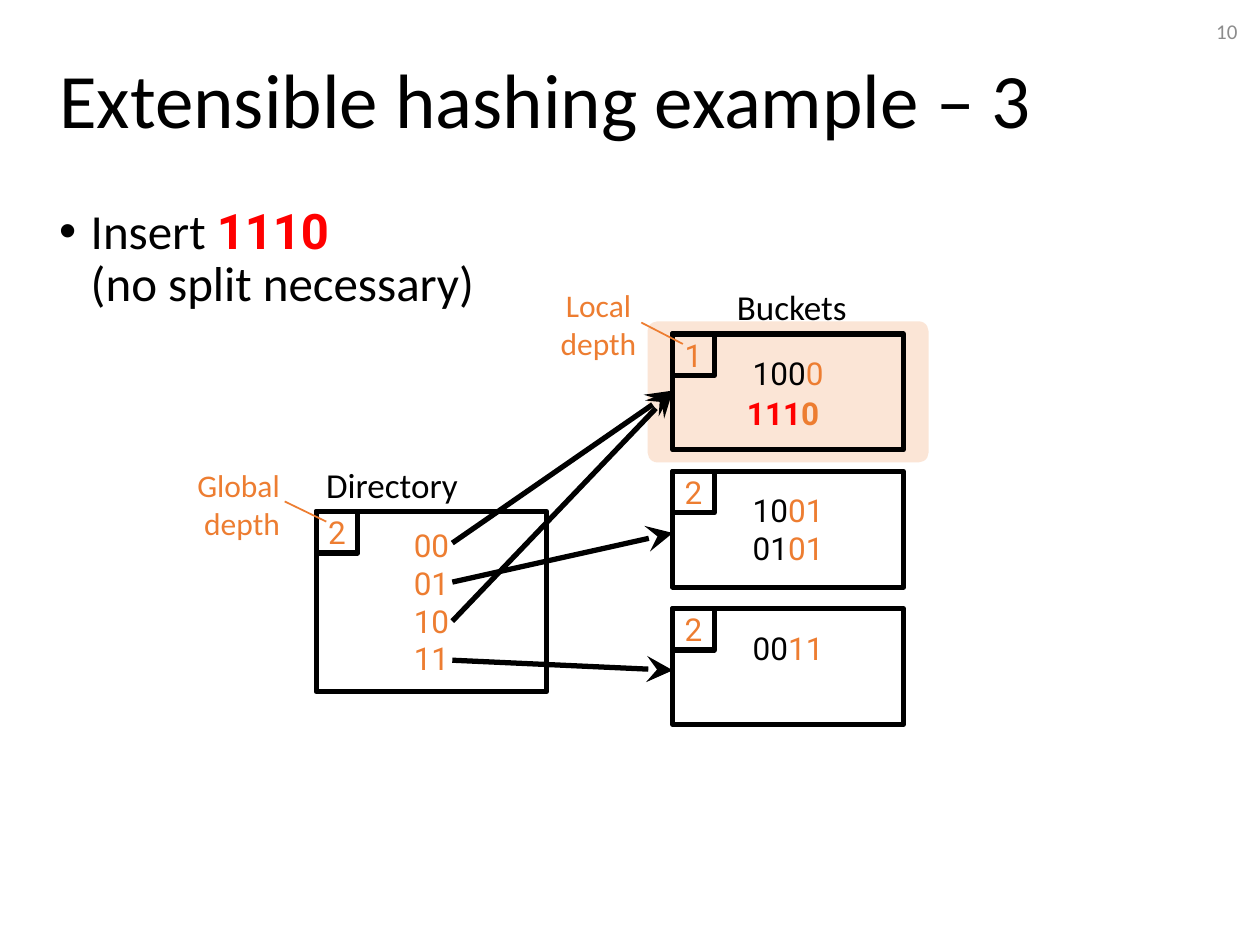
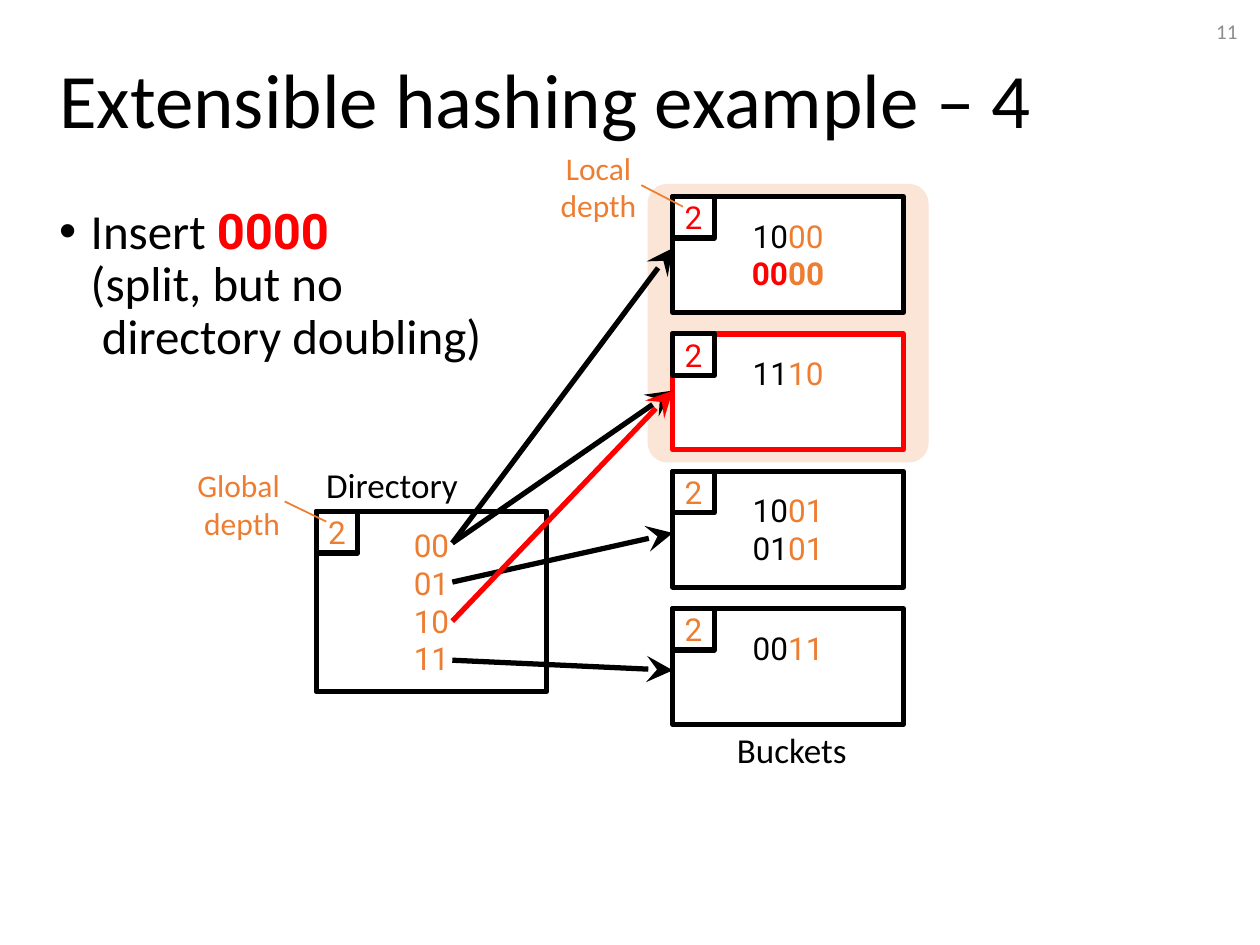
from dataclasses import dataclass

from lxml import etree
from pptx import Presentation
from pptx.dml.color import RGBColor
from pptx.enum import shapes, text
from pptx.oxml import ns
from pptx.util import Inches, Pt


@dataclass(frozen=True)
class Theme:
    ink: str = "000000"
    accent: str = "ED7D31"
    new: str = "FF0000"
    highlight: str = "FBE5D6"
    paper: str = "FFFFFF"
    muted: str = "8C8C8C"
    sans: str = "Calibri"
    digits: str = "Roboto"
    title_size: int = 44
    body_size: int = 28
    label_size: int = 20
    key_size: int = 18
    number_size: int = 12
    box_line: float = 3
    callout_line: float = 1


THEME = Theme()
LEFT, CENTER, RIGHT = text.PP_ALIGN.LEFT, text.PP_ALIGN.CENTER, text.PP_ALIGN.RIGHT
TOP, MIDDLE = text.MSO_ANCHOR.TOP, text.MSO_ANCHOR.MIDDLE

BUCKET_LEFT, BUCKET_WIDTH, BUCKET_HEIGHT = 5.34, 1.83, 0.92
FIRST_BUCKET_TOP, BUCKET_PITCH = 1.56, 1.09
ARROW_ENDS = (1.97, 3.1, 4.23, 5.32)  # one per bucket slot
DEPTH_SIDE = 0.33
DIRECTORY_BOX = (2.51, 4.06, 1.83, 1.43)


def bucket_top(slot):
    return FIRST_BUCKET_TOP + slot * BUCKET_PITCH


def place(shape, box):
    shape.left, shape.top, shape.width, shape.height = map(Inches, box)


def write(frame, paragraphs, size, font, align=LEFT, anchor=TOP, wrap=False):
    """Fill a frame; each paragraph is a list of (text, colour, bold, font) runs."""
    frame.word_wrap = wrap
    frame.auto_size = text.MSO_AUTO_SIZE.NONE
    frame.vertical_anchor = anchor
    for index, runs in enumerate(paragraphs):
        paragraph = frame.add_paragraph() if index else frame.paragraphs[0]
        paragraph.alignment = align
        paragraph.font.size = Pt(size)
        paragraph.font.name = font
        for content, colour, bold, run_font in runs:
            for line_index, line in enumerate(content.split("\n")):
                if line_index:
                    paragraph.add_line_break()
                if line:
                    run = paragraph.add_run()
                    run.text = line
                    run.font.color.rgb = RGBColor.from_string(colour)
                    run.font.bold = bold
                    if run_font != font:
                        run.font.name = run_font


def plain(content, colour, font=THEME.digits):
    return [(content, colour, False, font)]


def hashed_key(key, depth, is_new=False):
    """Runs for a key whose last bits, as many as the local depth, are accented."""
    return [(key[:-depth], THEME.new if is_new else THEME.ink, is_new, THEME.digits),
            (key[-depth:], THEME.accent, is_new, THEME.digits)]


def add_label(slide, box, content, size, colour, align=LEFT, anchor=TOP):
    label = slide.shapes.add_textbox(*map(Inches, box))
    write(label.text_frame, [plain(content, colour, THEME.sans)], size,
          THEME.sans, align, anchor)


def add_box(slide, box, fill=None, line=None, kind=shapes.MSO_SHAPE.RECTANGLE):
    shape = slide.shapes.add_shape(kind, *map(Inches, box))
    shape.shadow.inherit = False
    if fill:
        shape.fill.solid()
        shape.fill.fore_color.rgb = RGBColor.from_string(fill)
    else:
        shape.fill.background()
    if line:
        shape.line.color.rgb = RGBColor.from_string(line)
        shape.line.width = Pt(THEME.box_line)
    else:
        shape.line.fill.background()
    return shape


def add_line(slide, start, end, colour, width, arrow=False):
    line = slide.shapes.add_connector(
        shapes.MSO_CONNECTOR.STRAIGHT, *map(Inches, (*start, *end)))
    line.line.color.rgb = RGBColor.from_string(colour)
    line.line.width = Pt(width)
    if arrow:
        etree.SubElement(line.line._get_or_add_ln(), ns.qn("a:tailEnd"),
                         type="stealth", w="lg", len="lg")
    etree.SubElement(line._element.spPr, ns.qn("a:effectLst"))


def add_depth(slide, left, top, depth, colour=THEME.accent, fill=None):
    corner = add_box(slide, (left, top, DEPTH_SIDE, DEPTH_SIDE), fill, THEME.ink)
    write(corner.text_frame, [plain(str(depth), colour)], THEME.key_size,
          THEME.digits, CENTER, MIDDLE)


def add_bucket(slide, slot, depth, keys, line=THEME.ink, fill=None,
               depth_colour=THEME.accent):
    top = bucket_top(slot)
    bucket = add_box(slide, (BUCKET_LEFT, top, BUCKET_WIDTH, BUCKET_HEIGHT), fill, line)
    bucket.text_frame.margin_top = Inches(0.16)
    write(bucket.text_frame, keys, THEME.key_size, THEME.digits, CENTER)
    add_depth(slide, BUCKET_LEFT, top, depth, depth_colour, fill)


def add_highlight(slide, first_slot, count):
    height = (count - 1) * BUCKET_PITCH + BUCKET_HEIGHT + 0.2
    highlight = add_box(
        slide, (BUCKET_LEFT - 0.2, bucket_top(first_slot) - 0.1, BUCKET_WIDTH + 0.4, height),
        THEME.highlight, kind=shapes.MSO_SHAPE.ROUNDED_RECTANGLE)
    highlight.adjustments[0] = 0.07


def add_directory(slide, box):
    left, top, _, _ = box
    directory = add_box(slide, box, line=THEME.ink)
    entries = [plain(f"{entry:02b}", THEME.accent) for entry in range(4)]
    write(directory.text_frame, entries, THEME.key_size, THEME.digits, CENTER, MIDDLE)
    add_depth(slide, left, top, 2)
    add_label(slide, (left - 0.02, top - 0.43, 1.3, 0.44), "Directory",
              THEME.label_size, THEME.ink)
    add_label(slide, (left - 1.07, top - 0.41, 0.88, 0.71), "Global\ndepth",
              THEME.key_size, THEME.accent, RIGHT)
    add_line(slide, (left - 0.25, top - 0.08), (left + 0.08, top + 0.08),
             THEME.accent, THEME.callout_line)


def add_local_depth(slide, slot):
    """Label the depth corner of the topmost bucket, clear of the pointers."""
    top = bucket_top(slot)
    add_label(slide, (BUCKET_LEFT - 1.01, top - 0.43, 0.84, 0.71), "Local\ndepth",
              THEME.key_size, THEME.accent, CENTER)
    add_line(slide, (BUCKET_LEFT - 0.25, top - 0.09), (BUCKET_LEFT + 0.08, top + 0.08),
             THEME.accent, THEME.callout_line)


def add_pointer(slide, entry, slot, colour=THEME.ink):
    left, top, *_ = DIRECTORY_BOX
    add_line(slide, (left + 1.08, top + 0.25 + 0.31 * entry),
             (BUCKET_LEFT, ARROW_ENDS[slot]), colour, THEME.box_line, arrow=True)


def add_frame(presentation, number, title, key, remark):
    """Start a slide with its title, bullet and slide number."""
    slide = presentation.slides.add_slide(presentation.slide_layouts[1])
    heading, body = slide.shapes.title, slide.placeholders[1]
    place(heading, (0.37, 0.18, 9.63, 1.29))
    write(heading.text_frame, [plain(title, THEME.ink, THEME.sans)],
          THEME.title_size, THEME.sans, anchor=MIDDLE, wrap=True)
    heading.text_frame.paragraphs[0].line_spacing = 0.9

    place(body, (0.37, 1.59, 3.97, 1.75))
    write(body.text_frame, [[("Insert ", THEME.ink, False, THEME.sans),
                             (key, THEME.new, True, THEME.digits),
                             ("\n" + remark, THEME.ink, False, THEME.sans)]],
          THEME.body_size, THEME.sans, wrap=True)
    bullet = body.text_frame.paragraphs[0]
    bullet.line_spacing = 0.9
    bullet.space_before = Pt(10)
    properties = bullet._p.get_or_add_pPr()
    properties.set("marL", str(Inches(0.25)))
    properties.set("indent", str(-Inches(0.25)))

    add_label(slide, (7.67, 0.05, 2.25, 0.4), str(number), THEME.number_size,
              THEME.muted, RIGHT, MIDDLE)
    return slide


def add_settled_parts(slide, buckets_label_top, top_slot):
    """Draw the directory, labels and the two buckets that stay unchanged."""
    add_bucket(slide, 2, 2, [hashed_key("1001", 2), hashed_key("0101", 2)])
    add_bucket(slide, 3, 2, [hashed_key("0011", 2)])
    add_label(slide, (BUCKET_LEFT + 0.41, buckets_label_top, 1.14, 0.44), "Buckets",
              THEME.label_size, THEME.ink)
    add_directory(slide, DIRECTORY_BOX)
    add_local_depth(slide, top_slot)
    for entry, slot in ((0, 1), (1, 2), (3, 3)):
        add_pointer(slide, entry, slot)


def build_insert_slide(presentation):
    slide = add_frame(presentation, 10, "Extensible hashing example – 3",
                      "1110", "(no split necessary)")
    add_highlight(slide, 1, 1)
    add_bucket(slide, 1, 1, [hashed_key("1000", 1)])
    add_settled_parts(slide, 2.22, 1)
    add_pointer(slide, 2, 1)
    inserted = slide.shapes.add_textbox(
        *map(Inches, (BUCKET_LEFT + 0.49, bucket_top(1) + 0.43, 1.02, 0.4)))
    write(inserted.text_frame, [hashed_key("1110", 1, True)], THEME.key_size, THEME.digits,
          wrap=True)


def build_split_slide(presentation):
    slide = add_frame(presentation, 11, "Extensible hashing example – 4",
                      "0000", "(split, but no\n directory doubling)")
    add_highlight(slide, 0, 2)
    split_style = {"fill": THEME.paper, "depth_colour": THEME.new}
    add_bucket(slide, 1, 2, [hashed_key("1110", 2)], THEME.new, **split_style)
    add_bucket(slide, 0, 2, [hashed_key("1000", 2), hashed_key("0000", 2, True)],
               **split_style)
    add_settled_parts(slide, 5.73, 0)
    add_pointer(slide, 2, 1, THEME.new)
    add_pointer(slide, 0, 0)


def main():
    presentation = Presentation()
    presentation.slide_width, presentation.slide_height = Inches(10), Inches(7.5)
    build_insert_slide(presentation)
    build_split_slide(presentation)
    presentation.save("out.pptx")


if __name__ == "__main__":
    main()
